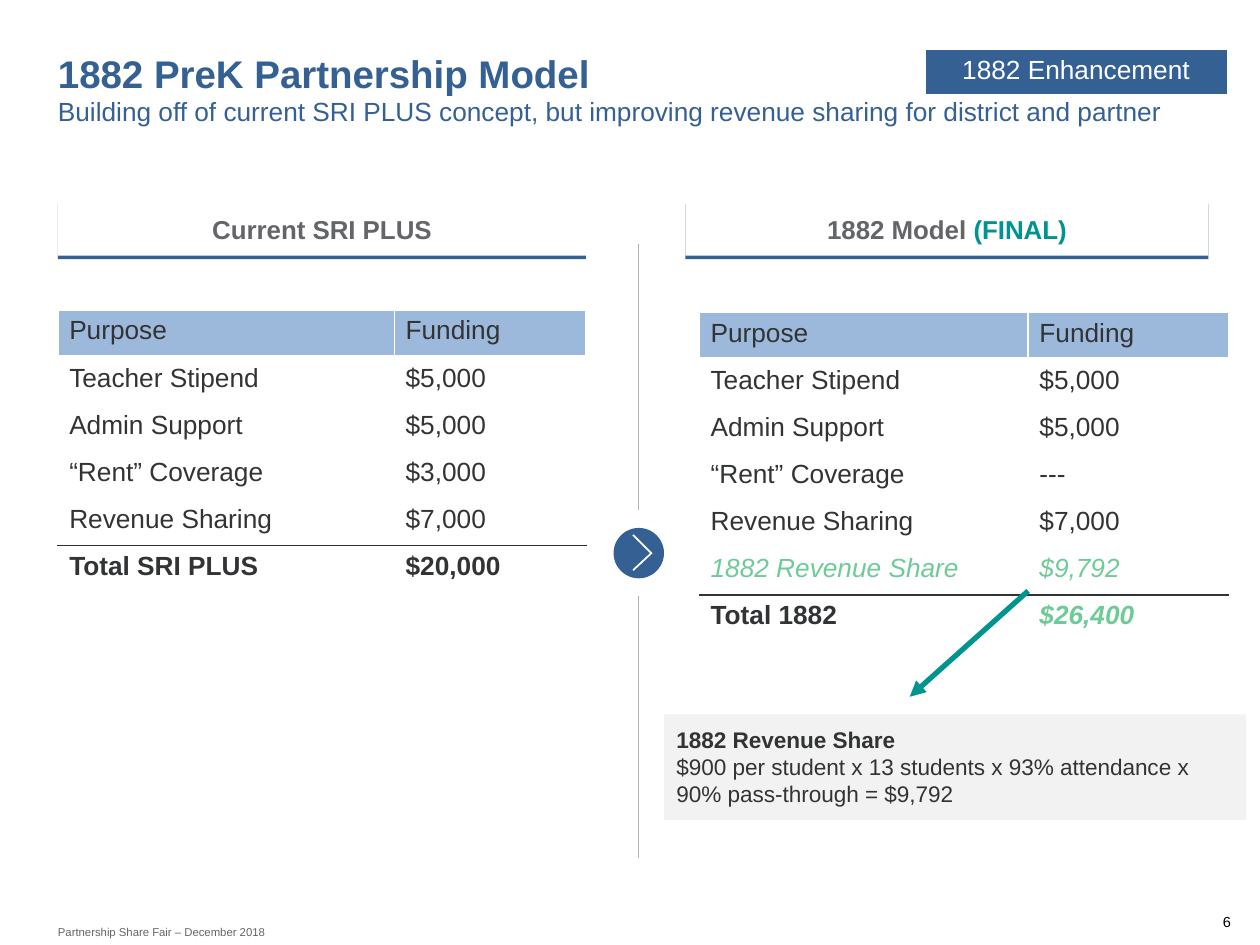
from dataclasses import dataclass

from lxml import etree
from pptx import Presentation
from pptx.dml.color import RGBColor
from pptx.enum.shapes import MSO_CONNECTOR, MSO_SHAPE
from pptx.enum.text import MSO_ANCHOR, MSO_AUTO_SIZE, PP_ALIGN
from pptx.oxml.ns import qn
from pptx.slide import Slide
from pptx.util import Inches, Pt

STRAIGHT = MSO_CONNECTOR.STRAIGHT
RECTANGLE, OVAL = MSO_SHAPE.RECTANGLE, MSO_SHAPE.OVAL
TOP, MIDDLE, BOTTOM = MSO_ANCHOR.TOP, MSO_ANCHOR.MIDDLE, MSO_ANCHOR.BOTTOM
LEFT, CENTER, RIGHT = PP_ALIGN.LEFT, PP_ALIGN.CENTER, PP_ALIGN.RIGHT
NO_AUTOFIT = MSO_AUTO_SIZE.NONE
BLUE, PALE_BLUE, TEAL, GREEN = "346094", "9CB9DC", "009490", "6ECB98"
INK, GRAY, RULE_GRAY, PANEL = "323335", "646569", "B2B2B2", "F2F2F2"
WHITE, BLACK = "FFFFFF", "000000"


def rgb(value):
    """Turn a hex string into a colour."""
    return RGBColor.from_string(value)


def inches(*values):
    """Turn plain numbers into lengths."""
    return [Inches(value) for value in values]


@dataclass
class SlideBuilder:
    """Holds the text style and the slide being built."""

    slide: Slide
    font_name: str = "Arial"

    def add_runs(self, paragraph, runs, align=LEFT):
        """Add formatted runs, given as text, size, colour and extra font values."""
        paragraph.alignment = align
        for text, size, color, extra in runs:
            if text == "\n":
                paragraph.add_line_break()
                continue
            run = paragraph.add_run()
            run.text = text
            values = {"name": self.font_name, "size": Pt(size), "bold": False, "italic": False}
            for name, value in (values | extra).items():
                setattr(run.font, name, value)
            run.font.color.rgb = rgb(color)

    def fill_frame(self, frame, paragraphs, margins, anchor=TOP, align=LEFT, wrap=True):
        """Set the frame format and add its paragraphs."""
        horizontal, vertical = inches(*margins)
        values = {
            "margin_left": horizontal, "margin_right": horizontal,
            "margin_top": vertical, "margin_bottom": vertical,
            "vertical_anchor": anchor, "word_wrap": wrap, "auto_size": NO_AUTOFIT,
        }
        for name, value in values.items():
            setattr(frame, name, value)
        for index, runs in enumerate(paragraphs):
            paragraph = frame.add_paragraph() if index else frame.paragraphs[0]
            self.add_runs(paragraph, runs, align)

    def title(self, box, runs):
        """Place and fill the title placeholder."""
        shape = self.slide.shapes.title
        for name, value in zip(("left", "top", "width", "height"), inches(*box)):
            setattr(shape, name, value)
        self.fill_frame(shape.text_frame, [runs], (0, 0.05), BOTTOM)

    def text(self, box, runs, **layout):
        """Add a one-line text box without margins."""
        shape = self.slide.shapes.add_textbox(*inches(*box))
        self.fill_frame(shape.text_frame, [runs], (0, 0), wrap=False, **layout)

    def paint(self, shape, fill):
        """Give a shape a plain fill without line or shadow."""
        shape.shadow.inherit = False
        shape.fill.solid()
        shape.fill.fore_color.rgb = rgb(fill)
        shape.line.fill.background()
        return shape

    def panel(self, kind, box, fill, paragraphs=(), **layout):
        """Add a filled preset shape with optional text."""
        shape = self.paint(self.slide.shapes.add_shape(kind, *inches(*box)), fill)
        self.fill_frame(shape.text_frame, paragraphs, (0.1, 0.09), **layout)
        return shape

    def heading(self, box, runs):
        """Add a column heading underlined by a hard shadow."""
        shape = self.panel(RECTANGLE, box, WHITE, [runs], anchor=BOTTOM, align=CENTER)
        effects = shape._element.spPr.find(qn("a:effectLst"))
        shadow = etree.SubElement(effects, qn("a:outerShdw"), dist=str(Pt(2)), dir="5400000",
                                  algn="ctr", rotWithShape="0")
        etree.SubElement(shadow, qn("a:srgbClr"), val=BLUE)

    def outline(self, points, fill):
        """Add a closed polygon."""
        start, *others = [inches(*point) for point in points]
        builder = self.slide.shapes.build_freeform(*start)
        builder.add_line_segments(others, close=True)
        self.paint(builder.convert_to_shape(), fill)

    def line(self, start, end, color, width, arrow=False):
        """Add a straight line, with an arrowhead at its end if asked."""
        connector = self.slide.shapes.add_connector(STRAIGHT, *inches(*start, *end))
        connector.line.color.rgb = rgb(color)
        connector.line.width = Pt(width)
        if arrow:
            line = connector._element.spPr.find(qn("a:ln"))
            etree.SubElement(line, qn("a:tailEnd"), type="triangle")
        etree.SubElement(connector._element.spPr, qn("a:effectLst"))

    def border(self, cell, side, color, width):
        """Draw one side of a table cell."""
        properties = cell._tc.get_or_add_tcPr()
        line = etree.SubElement(properties, qn(f"a:ln{side}"), w=str(Pt(width)))
        fill = etree.SubElement(line, qn("a:solidFill"))
        etree.SubElement(fill, qn("a:srgbClr"), val=color)

    def table(self, left, top, widths, rows, header_fill, align=LEFT):
        """Add a table with a filled header and a rule above a total row."""
        row_height = 0.374
        frame = self.slide.shapes.add_table(
            len(rows), len(widths), *inches(left, top, sum(widths), row_height * len(rows)))
        table = frame.table
        table.horz_banding = False
        for column, width in zip(table.columns, widths):
            column.width = Inches(width)
        last = len(rows) - 1
        for row_index, row in enumerate(rows):
            table.rows[row_index].height = Inches(row_height)
            for column_index, (text, color, extra) in enumerate(row):
                cell = table.cell(row_index, column_index)
                top_color = INK if last and row_index == last else WHITE
                bottom_color = INK if last and row_index == last - 1 else WHITE
                self.border(cell, "L", WHITE, 1)
                self.border(cell, "R", WHITE, 1)
                self.border(cell, "T", top_color, 3 if row_index == 1 else 1)
                self.border(cell, "B", bottom_color, 1 if row_index else 3)
                if row_index:
                    cell.fill.background()
                else:
                    cell.fill.solid()
                    cell.fill.fore_color.rgb = rgb(header_fill)
                cell.margin_left = cell.margin_right = Inches(0.09)
                cell.margin_top = cell.margin_bottom = Inches(0.05)
                self.add_runs(cell.text_frame.paragraphs[0], [(text, 15, color, extra)], align)


def funding_rows(amounts, extra_rows):
    """Build the shared funding rows and append the rows of one model."""
    purposes = ("Purpose", "Teacher Stipend", "Admin Support", "“Rent” Coverage", "Revenue Sharing")
    pairs = zip(purposes, ("Funding", *amounts))
    return [[(text, INK, {}) for text in pair] for pair in pairs] + extra_rows


def main():
    """Build and save the slide."""
    presentation = Presentation()
    presentation.slide_width, presentation.slide_height = inches(10, 7.5)
    builder = SlideBuilder(presentation.slides.add_slide(presentation.slide_layouts[5]))
    bold, italic = {"bold": True}, {"italic": True}

    builder.text((0.46, 7.33, 1.92, 0.13),
                 [("Partnership Share Fair – December 2018", 6.5, GRAY, {})], anchor=MIDDLE)
    builder.text((9.58, 7.25, 0.19, 0.14), [("6", 8.3, BLACK, {})], align=RIGHT)
    builder.title((0.46, 0.22, 9.08, 0.84), [
        ("1882 PreK Partnership Model", 22, BLUE, bold),
        ("\n", 22, BLUE, {}),
        ("Building off of current SRI PLUS concept, but improving revenue sharing "
         "for district and partner", 15, BLUE, {}),
    ])

    builder.panel(OVAL, (4.87, 4.19, 0.4, 0.4), BLUE)
    builder.outline([(5.03, 4.53), (5.02, 4.52), (5.16, 4.39), (5.02, 4.25),
                     (5.03, 4.24), (5.18, 4.39)], WHITE)
    for top, bottom in ((1.94, 4.05), (4.73, 6.81)):
        builder.line((5.07, bottom), (5.07, top), RULE_GRAY, 0.75)

    builder.heading((0.46, 1.59, 4.19, 0.44), [("Current SRI PLUS", 14.8, GRAY, bold)])
    builder.heading((5.44, 1.59, 4.15, 0.44),
                    [("1882 Model ", 14.8, GRAY, bold), ("(FINAL)", 14.8, TEAL, bold)])

    builder.table(0.46, 2.46, (2.67, 1.52), funding_rows(
        ("$5,000", "$5,000", "$3,000", "$7,000"),
        [[("Total SRI PLUS", INK, bold), ("$20,000", INK, bold)]]), PALE_BLUE)
    builder.table(5.55, 2.48, (2.61, 1.59), funding_rows(
        ("$5,000", "$5,000", "---", "$7,000"),
        [[("1882 Revenue Share", GREEN, italic), ("$9,792", GREEN, italic)],
         [("Total 1882", INK, bold), ("$26,400", GREEN, bold | italic)]]), PALE_BLUE)

    builder.panel(RECTANGLE, (5.27, 5.67, 4.62, 0.84), PANEL, [
        [("1882 Revenue Share", 12.9, INK, bold)],
        [("$900 per student x 13 students x 93% attendance x 90% pass-through = $9,792",
          12.9, INK, {})],
    ])
    builder.line((8.16, 4.69), (7.22, 5.53), TEAL, 3, arrow=True)
    builder.table(7.34, 0.39, (2.4,), [[("1882 Enhancement", WHITE, {})]], BLUE, CENTER)

    presentation.save("out.pptx")


if __name__ == "__main__":
    main()
